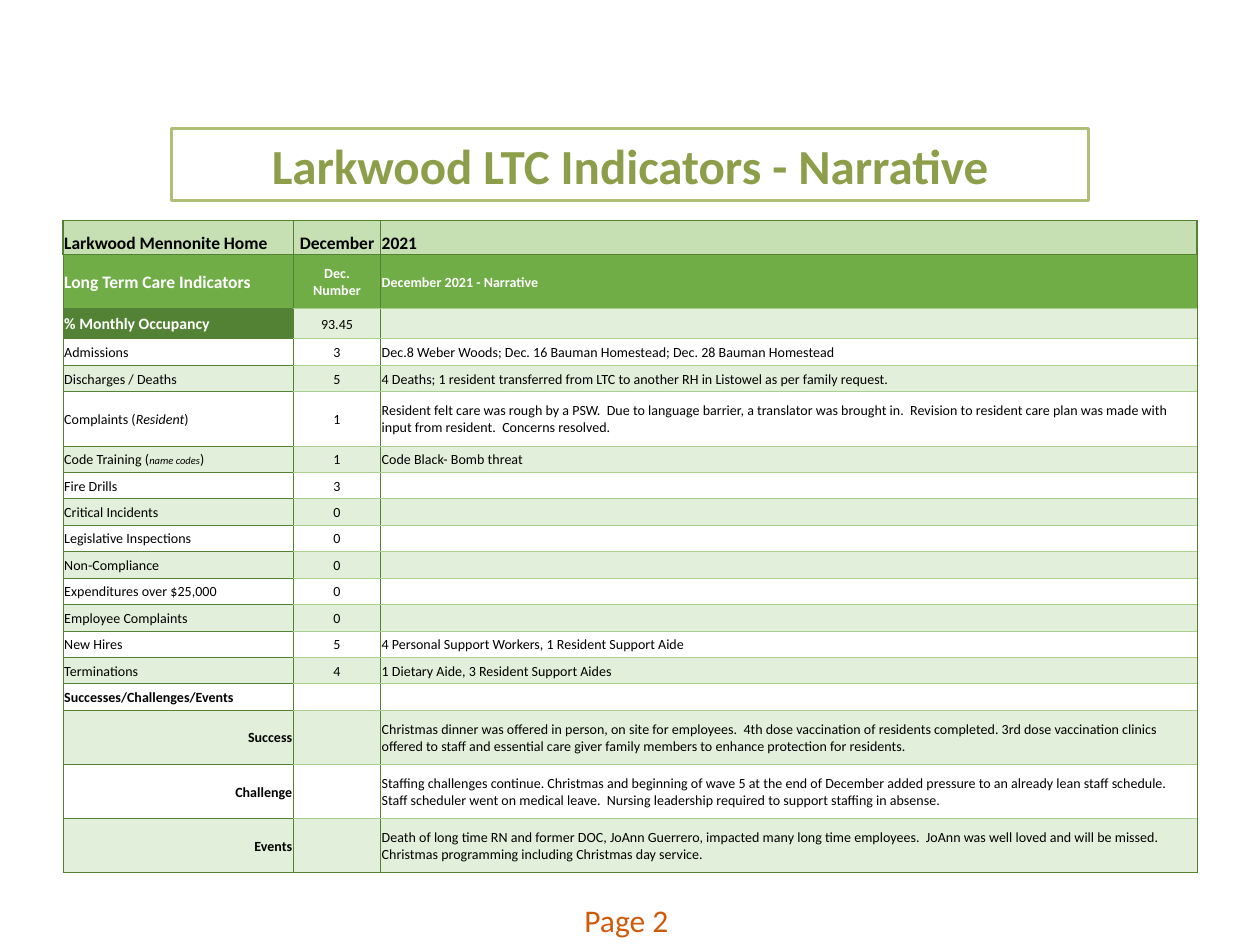
"""Build the long term care indicators slide."""
from dataclasses import dataclass

import lxml.etree
import pptx
import pptx.dml.color
import pptx.enum.text
import pptx.oxml.ns
import pptx.util

Inches = pptx.util.Inches
Align = pptx.enum.text.PP_ALIGN
Anchor = pptx.enum.text.MSO_ANCHOR


@dataclass(frozen=True)
class Theme:
    """Colours, font and type sizes."""
    font: str = "Calibri"
    white: str = "FFFFFF"
    black: str = "000000"
    olive: str = "8C9E4A"
    frame: str = "AFBF76"
    rust: str = "CF5A0B"
    dark: str = "548235"
    green: str = "70AD47"
    light: str = "A9D08E"
    head: str = "C6E0B4"
    band: str = "E2EFDA"
    title: float = 28
    page: float = 18
    large: float = 10
    mid: float = 9
    small: float = 8
    tiny: float = 6


THEME = Theme()


@dataclass(frozen=True)
class Row:
    """One table row: label, number, narrative and look of the label."""
    label: str
    count: str = ""
    note: str = ""
    high: float = 0.21
    bold: bool = False
    align: Align = Align.LEFT
    slant: float = THEME.small


TALL = 0.43
WIDTHS = (1.83, 0.69, 6.48)
ROWS = (
    Row("Larkwood Mennonite Home", "December", "2021", 0.27, True),
    Row("Long Term Care Indicators", "Dec.\nNumber", "December 2021 - Narrative", TALL, True),
    Row("% Monthly Occupancy", "93.45", high=0.24, bold=True),
    Row("Admissions", "3", "Dec.8 Weber Woods; Dec. 16 Bauman Homestead; Dec. 28 Bauman Homestead"),
    Row("Discharges / Deaths", "5",
        "4 Deaths; 1 resident transferred from LTC to another RH in Listowel as per family request."),
    Row("Complaints (*Resident*)", "1",
        "Resident felt care was rough by a PSW.  Due to language barrier, a translator was brought in.  "
        "Revision to resident care plan was made with input from resident.  Concerns resolved.", TALL),
    Row("Code Training (*name codes*)", "1", "Code Black- Bomb threat", slant=THEME.tiny),
    Row("Fire Drills", "3"),
    Row("Critical Incidents", "0"),
    Row("Legislative Inspections", "0"),
    Row("Non-Compliance", "0"),
    Row("Expenditures over $25,000", "0"),
    Row("Employee Complaints", "0"),
    Row("New Hires", "5", "4 Personal Support Workers, 1 Resident Support Aide"),
    Row("Terminations", "4", "1 Dietary Aide, 3 Resident Support Aides"),
    Row("Successes/Challenges/Events", bold=True),
    Row("Success", "",
        "Christmas dinner was offered in person, on site for employees.  4th dose vaccination of residents "
        "completed. 3rd dose vaccination clinics offered to staff and essential care giver family members "
        "to enhance protection for residents.", TALL, True, Align.RIGHT),
    Row("Challenge", "",
        "Staffing challenges continue. Christmas and beginning of wave 5 at the end of December added "
        "pressure to an already lean staff schedule.  Staff scheduler went on medical leave.  "
        "Nursing leadership required to support staffing in absense.", TALL, True, Align.RIGHT),
    Row("Events", "",
        "Death of long time RN and former DOC, JoAnn Guerrero, impacted many long time employees.  "
        "JoAnn was well loved and will be missed. Christmas programming including Christmas day service.",
        TALL, True, Align.RIGHT),
)


def paint(code: str) -> pptx.dml.color.RGBColor:
    """Turn a hex code into a colour."""
    return pptx.dml.color.RGBColor.from_string(code)


def write(frame, text: str, *, size: float, tint: str = THEME.black, bold: bool = False,
          align: Align = Align.LEFT, slant: float = THEME.small) -> None:
    """Fill a text frame; parts between asterisks are italic."""
    para = frame.paragraphs[0]
    para.alignment = align
    for spot, part in enumerate(text.split("*") if text else ()):
        for nth, line in enumerate(part.split("\n")):
            if nth:
                para.add_line_break()
            run = para.add_run()
            run.text = line
            font = run.font
            font.name = THEME.font
            font.size = pptx.util.Pt(slant if spot % 2 else size)
            font.bold = bold
            font.italic = bool(spot % 2)
            font.color.rgb = paint(tint)
    if not text:
        tag = pptx.oxml.ns.qn("a:endParaRPr")
        lxml.etree.SubElement(para._p, tag, sz=str(int(size * 100)))


def edge(cell, side: str, tint: str, width: float) -> None:
    """Draw one border of a cell."""
    name = pptx.oxml.ns.qn
    line = lxml.etree.SubElement(cell._tc.get_or_add_tcPr(), name(f"a:ln{side}"),
                                 w=str(pptx.util.Pt(width)))
    fill = lxml.etree.SubElement(line, name("a:solidFill"))
    lxml.etree.SubElement(fill, name("a:srgbClr"), val=tint)


def border(cell, row: int, col: int) -> None:
    """Draw the four borders that a cell's place calls for."""
    top, last = row == 0, row == len(ROWS) - 1
    rules = (
        ("L", True, top and col == 0),
        ("R", True, top and col == len(WIDTHS) - 1),
        ("T", row < 2 or col == 0, top),
        ("B", top or last or col == 0, False),
    )
    for side, deep, thick in rules:
        edge(cell, side, THEME.dark if deep else THEME.light, 1 if thick else 0.5)


def ground(row: int, col: int) -> str:
    """Choose the fill of a cell."""
    if row < 2:
        return (THEME.head, THEME.green)[row]
    if (row, col) == (2, 0):
        return THEME.dark
    return THEME.white if row % 2 else THEME.band


def scale(row: int, col: int) -> float:
    """Choose the type size of a cell."""
    if row == 0 or (row, col) == (1, 0):
        return THEME.large
    return THEME.mid if (row, col) == (2, 0) else THEME.small


def draw(slide) -> None:
    """Add the table of indicators."""
    shape = slide.shapes.add_table(len(ROWS), len(WIDTHS), Inches(0.5), Inches(1.75),
                                   Inches(sum(WIDTHS)), Inches(sum(row.high for row in ROWS)))
    table = shape.table
    table.first_row = table.horz_banding = False
    for col, width in enumerate(WIDTHS):
        table.columns[col].width = Inches(width)
    for spot, row in enumerate(ROWS):
        table.rows[spot].height = Inches(row.high)
        for col, text in enumerate((row.label, row.count, row.note)):
            cell = table.cell(spot, col)
            cell.margin_left = cell.margin_right = cell.margin_top = Inches(0.01)
            cell.margin_bottom = 0
            cell.vertical_anchor = Anchor.MIDDLE if spot else Anchor.BOTTOM
            border(cell, spot, col)
            shade = ground(spot, col)
            cell.fill.solid()
            cell.fill.fore_color.rgb = paint(shade)
            pale = shade in (THEME.green, THEME.dark)
            write(cell.text_frame, text, size=scale(spot, col),
                  tint=THEME.white if pale else THEME.black,
                  bold=row.bold if col == 0 else spot < 2,
                  align=(row.align, Align.CENTER, Align.LEFT)[col], slant=row.slant)


def main() -> None:
    """Build and save the deck."""
    deck = pptx.Presentation()
    deck.slide_width, deck.slide_height = Inches(10), Inches(7.5)
    slide = deck.slides.add_slide(deck.slide_layouts[5])
    title = slide.shapes.title
    title.left, title.top = Inches(1.36), Inches(1.02)
    title.width, title.height = Inches(7.28), Inches(0.57)
    title.fill.solid()
    title.fill.fore_color.rgb = paint(THEME.white)
    title.line.color.rgb = paint(THEME.frame)
    title.line.width = pptx.util.Pt(2)
    title.text_frame.auto_size = pptx.enum.text.MSO_AUTO_SIZE.NONE
    write(title.text_frame, "Larkwood LTC Indicators - Narrative",
          size=THEME.title, tint=THEME.olive, bold=True, align=Align.CENTER)
    page = slide.shapes.add_textbox(Inches(4.54), Inches(7.1), Inches(2.33), Inches(0.4))
    page.text_frame.word_wrap = True
    write(page.text_frame, "Page 2", size=THEME.page, tint=THEME.rust)
    draw(slide)
    deck.save("out.pptx")


if __name__ == "__main__":
    main()
